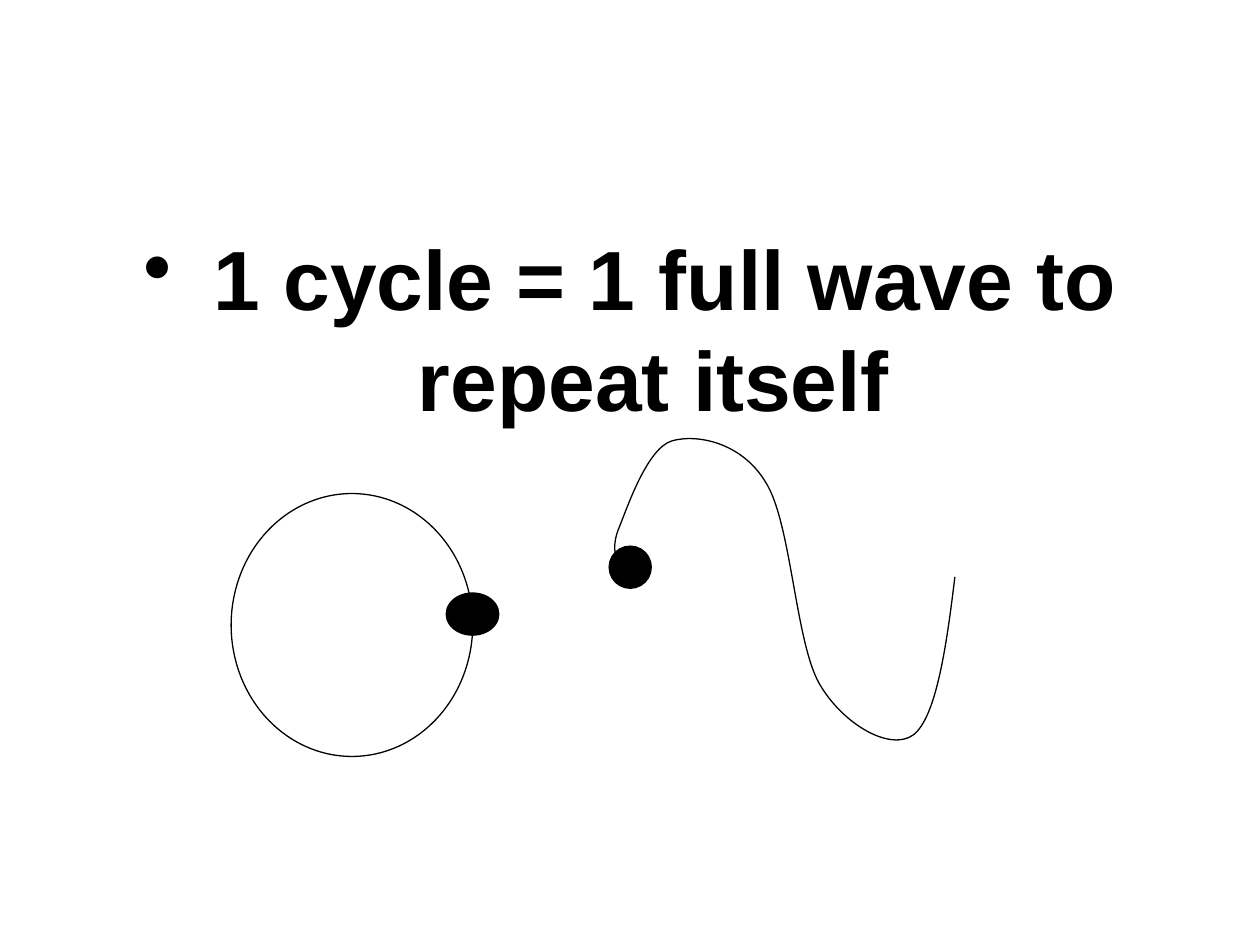
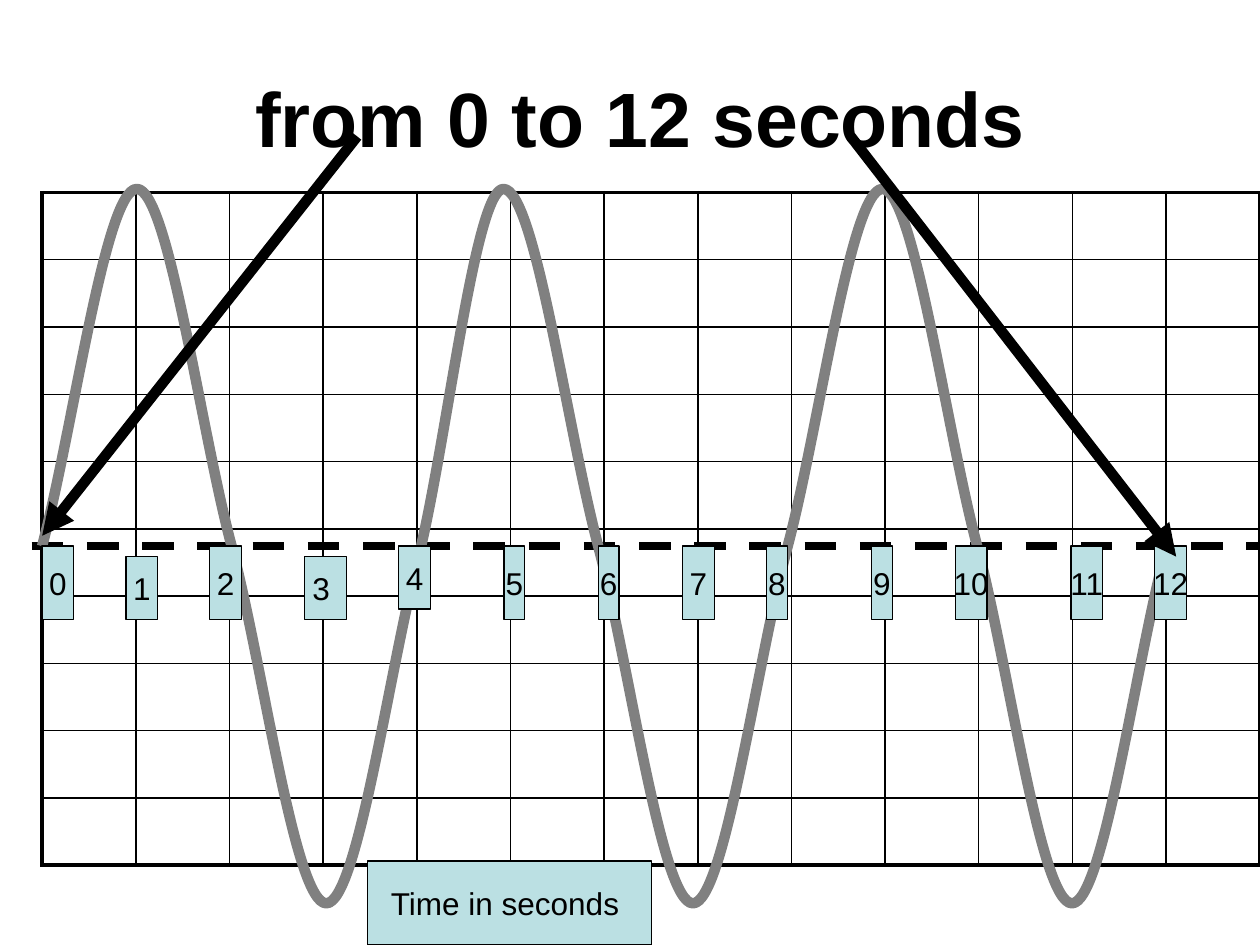
import dataclasses
from typing import Optional

import lxml.etree
import pptx
import pptx.dml.color
import pptx.enum.dml
import pptx.enum.shapes
import pptx.enum.text
import pptx.oxml
import pptx.oxml.ns
import pptx.util

Cm = pptx.util.Cm
Pt = pptx.util.Pt
RGBColor = pptx.dml.color.RGBColor
PresetShape = pptx.enum.shapes.MSO_SHAPE
Anchor = pptx.enum.text.MSO_ANCHOR
qn = pptx.oxml.ns.qn
Point = tuple[float, float]

BLACK = RGBColor(0x00, 0x00, 0x00)
GREY = RGBColor(0x80, 0x80, 0x80)
PALE_TEAL = RGBColor(0xBB, 0xE0, 0xE3)
FONT = "Arial"

AXIS_Y = 11.01
AMPLITUDE = 7.2
QUARTER_WIDTH = 1.91
QUARTER_COUNT = 12
WAVE_LEFT = 0.85
GRID_ROWS, GRID_COLUMNS = 10, 13


@dataclasses.dataclass(frozen=True)
class Box:
    """A rectangle in centimetres."""
    left: float
    top: float
    width: float
    height: float

    def lengths(self) -> tuple:
        return Cm(self.left), Cm(self.top), Cm(self.width), Cm(self.height)


@dataclasses.dataclass(frozen=True)
class Circle:
    box: Box
    fill: Optional[RGBColor] = None
    rotation: float = 0


@dataclasses.dataclass(frozen=True)
class Label:
    text: str
    left: float
    width: float = 0.64
    top: float = AXIS_Y
    height: float = 1.48


@dataclasses.dataclass(frozen=True)
class Line:
    start: Point
    end: Point
    weight: float
    dashed: bool = False
    arrow: bool = False


CIRCLES = [
    Circle(Box(4.66, 9.95, 4.87, 5.3)),
    Circle(Box(9.1, 11.85, 0.85, 1.06), BLACK, 90),
    Circle(Box(12.28, 11.01, 0.85, 0.85), BLACK),
]
SINGLE_WAVE = [
    (12.5, 11.43),
    (12.4, 11.23), (12.32, 11), (12.5, 10.59),
    (12.67, 10.16), (13.06, 9.04), (13.54, 8.89),
    (14.05, 8.74), (14.96, 8.92), (15.44, 9.73),
    (15.95, 10.54), (16.03, 12.9), (16.51, 13.77),
    (16.99, 14.61), (17.96, 15.16), (18.42, 14.81),
    (18.87, 14.45), (19.08, 13.06), (19.25, 11.63),
]
LABELS = [
    Label("0", 0.85),
    Label("1", 2.54, top=11.22, height=1.27),
    Label("2", 4.23),
    Label("3 ", 6.14, width=0.85, top=11.22, height=1.27),
    Label("4", 8.04, height=1.27),
    Label("5", 10.16, width=0.42),
    Label("6", 12.06, width=0.42),
    Label("7", 13.76),
    Label("8", 15.45, width=0.42),
    Label("9", 17.57, width=0.42),
    Label("10", 19.26),
    Label("11", 21.59),
    Label("12", 23.28),
    Label("Time in seconds ", 7.41, width=5.72, top=17.36, height=1.69),
]
AXIS = Line((0.64, AXIS_Y), (25.4, AXIS_Y), 4.5, dashed=True)
ARROWS = [
    Line((7.2, 2.75), (0.85, 10.8), 6, arrow=True),
    Line((17.15, 2.75), (23.71, 11.22), 6, arrow=True),
]


def write_text(shape, text: str, size: float, bold: bool = False, wrap: bool = True,
               anchor=Anchor.MIDDLE, space_before: float = 0, bullet_indent: float = 0) -> None:
    frame = shape.text_frame
    frame.word_wrap = wrap
    frame.vertical_anchor = anchor
    para = frame.paragraphs[0]
    para.alignment = pptx.enum.text.PP_ALIGN.CENTER
    para.space_before = Pt(space_before)
    span = para.add_run()
    span.text = text
    span.font.name = FONT
    span.font.size = Pt(size)
    span.font.bold = bold
    span.font.color.rgb = BLACK
    if bullet_indent:
        properties = para._p.get_or_add_pPr()
        properties.set("marL", str(Cm(bullet_indent)))
        properties.set("indent", str(-Cm(bullet_indent)))
        lxml.etree.SubElement(properties, qn("a:buChar"), char="•")


def add_heading(page, text: str, box: Box, **text_format) -> None:
    write_text(page.shapes.add_textbox(*box.lengths()), text, bold=True, **text_format)


def add_outlined(page, preset, box: Box, fill: Optional[RGBColor] = None):
    shape = page.shapes.add_shape(preset, *box.lengths())
    shape.shadow.inherit = False
    shape.line.color.rgb = BLACK
    shape.line.width = Pt(0.75)
    if fill is None:
        shape.fill.background()
    else:
        shape.fill.solid()
        shape.fill.fore_color.rgb = fill
    return shape


def add_curve(page, points: list[Point], color: RGBColor, weight: float) -> None:
    """Draw cubic curves: a start point, then two handles and an end for each."""
    lengths = [(Cm(x), Cm(y)) for x, y in points]
    builder = page.shapes.build_freeform(*lengths[0])
    builder.add_line_segments(lengths[1:], close=False)
    shape = builder.convert_to_shape()
    shape.shadow.inherit = False
    shape.fill.background()
    shape.line.color.rgb = color
    shape.line.width = Pt(weight)
    outline = shape.element.xpath(".//a:path")[0]
    segments = outline.findall(qn("a:lnTo"))
    for first in range(0, len(segments), 3):
        curve = lxml.etree.SubElement(outline, qn("a:cubicBezTo"))
        for segment in segments[first:first + 3]:
            curve.append(segment[0])
            outline.remove(segment)


def add_line(page, line: Line) -> None:
    connector = page.shapes.add_connector(
        pptx.enum.shapes.MSO_CONNECTOR.STRAIGHT,
        *(Cm(value) for value in line.start + line.end))
    connector.line.color.rgb = BLACK
    connector.line.width = Pt(line.weight)
    if line.dashed:
        connector.line.dash_style = pptx.enum.dml.MSO_LINE.DASH
    if line.arrow:
        lxml.etree.SubElement(connector.line._get_or_add_ln(), qn("a:tailEnd"), type="triangle")
    lxml.etree.SubElement(connector.element.spPr, qn("a:effectLst"))


def set_border(cell, side: str, weight: float) -> None:
    border = lxml.etree.SubElement(
        cell._tc.get_or_add_tcPr(), qn(f"a:ln{side}"), w=str(Pt(weight)))
    fill = lxml.etree.SubElement(border, qn("a:solidFill"))
    lxml.etree.SubElement(fill, qn("a:srgbClr"), val=str(BLACK))


def add_grid(page) -> None:
    box = Box(WAVE_LEFT, 3.88, 24.55, 13.56)
    grid = page.shapes.add_table(GRID_ROWS, GRID_COLUMNS, *box.lengths()).table
    grid.first_row = grid.horz_banding = False
    for row in range(GRID_ROWS):
        for column in range(GRID_COLUMNS):
            cell = grid.cell(row, column)
            outer_sides = {"L": column == 0, "R": column == GRID_COLUMNS - 1,
                           "T": row == 0, "B": row == GRID_ROWS - 1}
            for side, outer in outer_sides.items():
                set_border(cell, side, 2.25 if outer else 1)
            cell.fill.background()


def long_wave() -> list[Point]:
    """Three periods in quarters: flat at crests and troughs, steep at the axis."""
    levels = (0, -1, 0, 1)
    knots = [(WAVE_LEFT + QUARTER_WIDTH * index - (0.25 if index >= 5 else 0),
              levels[index % 4]) for index in range(QUARTER_COUNT + 1)]
    points = [(WAVE_LEFT, AXIS_Y)]
    for (x1, level1), (x2, level2) in zip(knots, knots[1:]):
        third = (x2 - x1) / 3
        handle1 = level1 or level2 / 3
        handle2 = level2 or level1 / 3
        for x, level in ((x1 + third, handle1), (x2 - third, handle2), (x2, level2)):
            points.append((x, AXIS_Y + AMPLITUDE * level))
    return points


def build_cycle_page(page) -> None:
    add_heading(page, " 1 cycle = 1 full wave to repeat itself", Box(1.27, 4.45, 22.86, 12.57),
                size=48, anchor=Anchor.TOP, space_before=9.6, bullet_indent=0.95)
    for circle in CIRCLES:
        shape = add_outlined(page, PresetShape.OVAL, circle.box, circle.fill)
        shape.rotation = circle.rotation
    add_curve(page, SINGLE_WAVE, BLACK, 0.75)


def build_seconds_page(page) -> None:
    add_heading(page, " from 0 to 12 seconds", Box(1.27, 0.76, 22.86, 3.18), size=44)
    add_grid(page)
    add_line(page, AXIS)
    add_curve(page, long_wave(), GREY, 6)
    for label in LABELS:
        box = Box(label.left, label.top, label.width, label.height)
        shape = add_outlined(page, PresetShape.RECTANGLE, box, PALE_TEAL)
        write_text(shape, label.text, size=18, wrap=False)
    for arrow in ARROWS:
        add_line(page, arrow)


def main() -> None:
    deck = pptx.Presentation()
    deck.slide_width, deck.slide_height = Cm(25.4), Cm(19.05)
    blank = deck.slide_layouts[6]
    for build_page in (build_cycle_page, build_seconds_page):
        build_page(deck.slides.add_slide(blank))
    deck.save("out.pptx")


if __name__ == "__main__":
    main()
